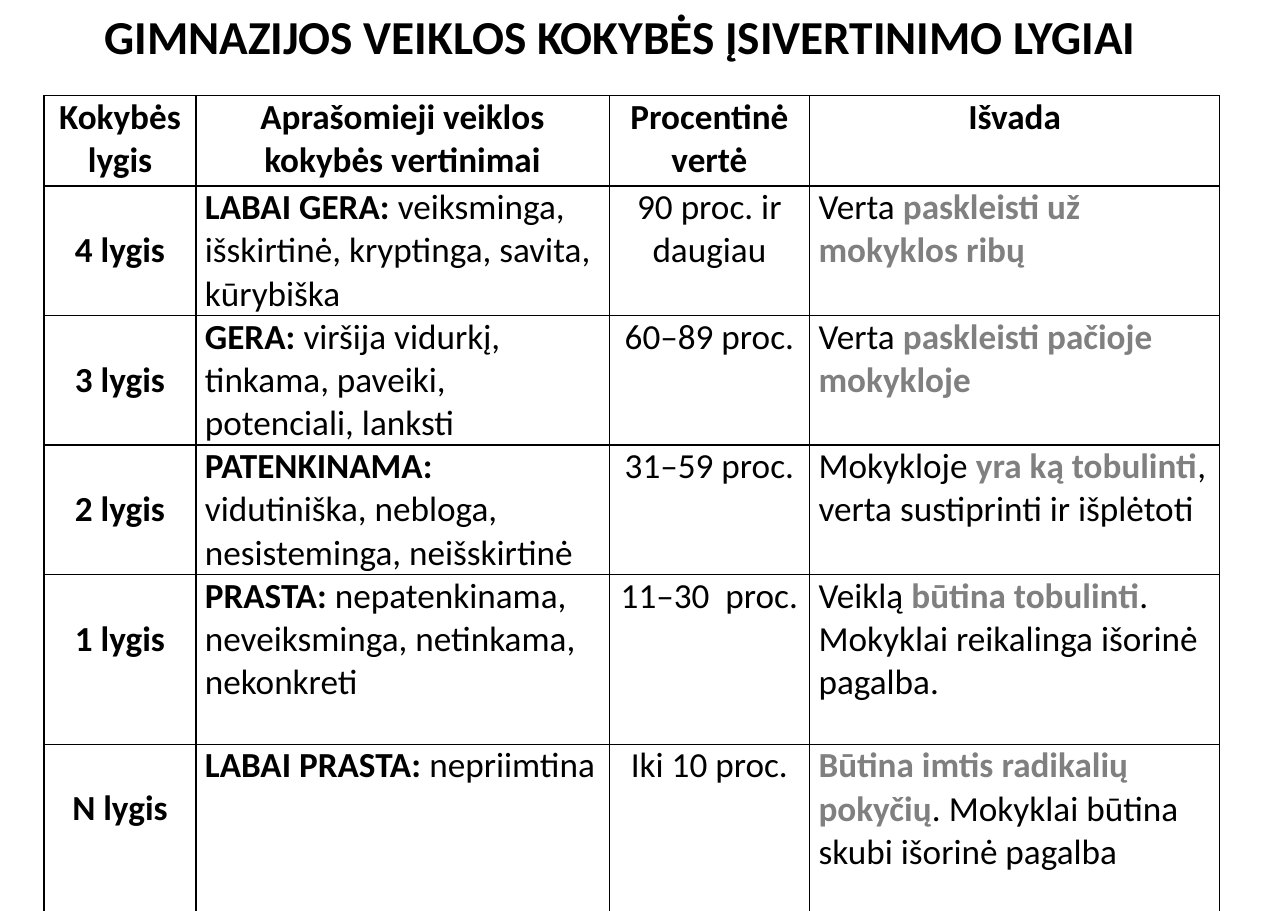
from pptx import Presentation, util as u
from pptx.dml.color import RGBColor
from pptx.enum import text
from pptx.oxml import parse_xml
from pptx.oxml.ns import nsdecls

BLACK = RGBColor(0x00, 0x00, 0x00)
GREY = RGBColor(0x80, 0x80, 0x80)
FONT = "Calibri"
BODY_SIZE = 23
TITLE_SIZE = 30.9
LINE_HEIGHT = u.Inches(0.39)
PLAIN, BOLD, ACCENT = (False, BLACK), (True, BLACK), (True, GREY)

COLUMNS = [1.38, 3.75, 1.82, 3.72]
ROWS = [0.82, 1.16, 1.16, 1.16, 1.54, 1.54]
TITLE_BOX = [u.Inches(n) for n in (0.84, 0.01, 9.78, 0.63)]
TABLE_BOX = [u.Inches(n) for n in (0.4, 0.87, sum(COLUMNS), sum(ROWS))]

TITLE = "GIMNAZIJOS VEIKLOS KOKYBĖS ĮSIVERTINIMO LYGIAI"
HEADERS = [
    ["Kokybės lygis"],
    ["Aprašomieji veiklos kokybės vertinimai"],
    ["Procentinė", "vertė"],
    ["Išvada"],
]
LEVELS = [
    ("4 lygis", "LABAI GERA: ", "veiksminga, išskirtinė, kryptinga, savita, kūrybiška",
     "90 proc. ir daugiau",
     [("Verta ", PLAIN), ("paskleisti už mokyklos ribų", ACCENT)]),
    ("3 lygis", "GERA: ", "viršija vidurkį, tinkama, paveiki, potenciali, lanksti",
     "60–89 proc.",
     [("Verta ", PLAIN), ("paskleisti pačioje mokykloje", ACCENT)]),
    ("2 lygis", "PATENKINAMA: ", "vidutiniška, nebloga, nesisteminga, neišskirtinė",
     "31–59 proc.",
     [("Mokykloje ", PLAIN), ("yra ką tobulinti", ACCENT),
      (", verta sustiprinti ir išplėtoti", PLAIN)]),
    ("1 lygis", "PRASTA: ", "nepatenkinama, neveiksminga, netinkama, nekonkreti",
     "11–30  proc.",
     [("Veiklą ", PLAIN), ("būtina tobulinti", ACCENT),
      (". Mokyklai reikalinga išorinė pagalba.", PLAIN)]),
    ("N lygis", "LABAI PRASTA: ", "nepriimtina",
     "Iki 10 proc.",
     [("Būtina imtis radikalių pokyčių", ACCENT),
      (". Mokyklai būtina skubi išorinė pagalba", PLAIN)]),
]


def add_run(p, words, style, size):
    r = p.add_run()
    r.text = words
    r.font.name = FONT
    r.font.size = u.Pt(size)
    r.font.bold, r.font.color.rgb = style


def add_borders(cell):
    props = cell._tc.get_or_add_tcPr()
    for i, side in enumerate(("lnL", "lnR", "lnT", "lnB")):
        props.insert(i, parse_xml(
            f'<a:{side} {nsdecls("a")} w="{u.Pt(1)}"><a:solidFill>'
            f'<a:srgbClr val="{BLACK}"/></a:solidFill></a:{side}>'))


def fill_cell(cell, paragraphs, centred=True, top=0):
    cell.fill.background()
    add_borders(cell)
    cell.margin_left = cell.margin_right = u.Inches(0.08)
    cell.margin_top, cell.margin_bottom = top, 0
    cell.vertical_anchor = text.MSO_ANCHOR.TOP
    tf = cell.text_frame
    for i, runs in enumerate(paragraphs):
        p = tf.add_paragraph() if i else tf.paragraphs[0]
        p.alignment = text.PP_ALIGN.CENTER if centred else text.PP_ALIGN.LEFT
        for words, style in runs:
            add_run(p, words, style, BODY_SIZE)


def add_title(s, box):
    sp = s.shapes.title
    sp.left, sp.top, sp.width, sp.height = box
    tf = sp.text_frame
    tf.word_wrap = True
    tf.auto_size = text.MSO_AUTO_SIZE.NONE
    tf.vertical_anchor = text.MSO_ANCHOR.MIDDLE
    tf.margin_left = tf.margin_right = u.Inches(0.11)
    tf.margin_top = tf.margin_bottom = u.Inches(0.06)
    p = tf.paragraphs[0]
    p.alignment = text.PP_ALIGN.LEFT
    add_run(p, TITLE, BOLD, TITLE_SIZE)


def add_levels_table(s, box):
    table = s.shapes.add_table(len(ROWS), len(COLUMNS), *box).table
    table.horz_banding = False
    for column, share in zip(table.columns, COLUMNS):
        column.width = int(box[2] * share / sum(COLUMNS))
    for row, share in zip(table.rows, ROWS):
        row.height = int(box[3] * share / sum(ROWS))
    for c, lines in enumerate(HEADERS):
        fill_cell(table.cell(0, c), [[(line, BOLD)] for line in lines])
    for i, (level, grade, traits, percent, verdict) in enumerate(LEVELS, 1):
        fill_cell(table.cell(i, 0), [[(level, BOLD)]], top=LINE_HEIGHT)
        fill_cell(table.cell(i, 1), [[(grade, BOLD), (traits, PLAIN)]], centred=False)
        fill_cell(table.cell(i, 2), [[(percent, PLAIN)]])
        fill_cell(table.cell(i, 3), [verdict], centred=False)


def main():
    prs = Presentation()
    prs.slide_width, prs.slide_height = u.Inches(11.69), u.Inches(8.27)
    s = prs.slides.add_slide(prs.slide_layouts[5])
    add_title(s, TITLE_BOX)
    add_levels_table(s, TABLE_BOX)
    prs.save("out.pptx")


if __name__ == "__main__":
    main()
